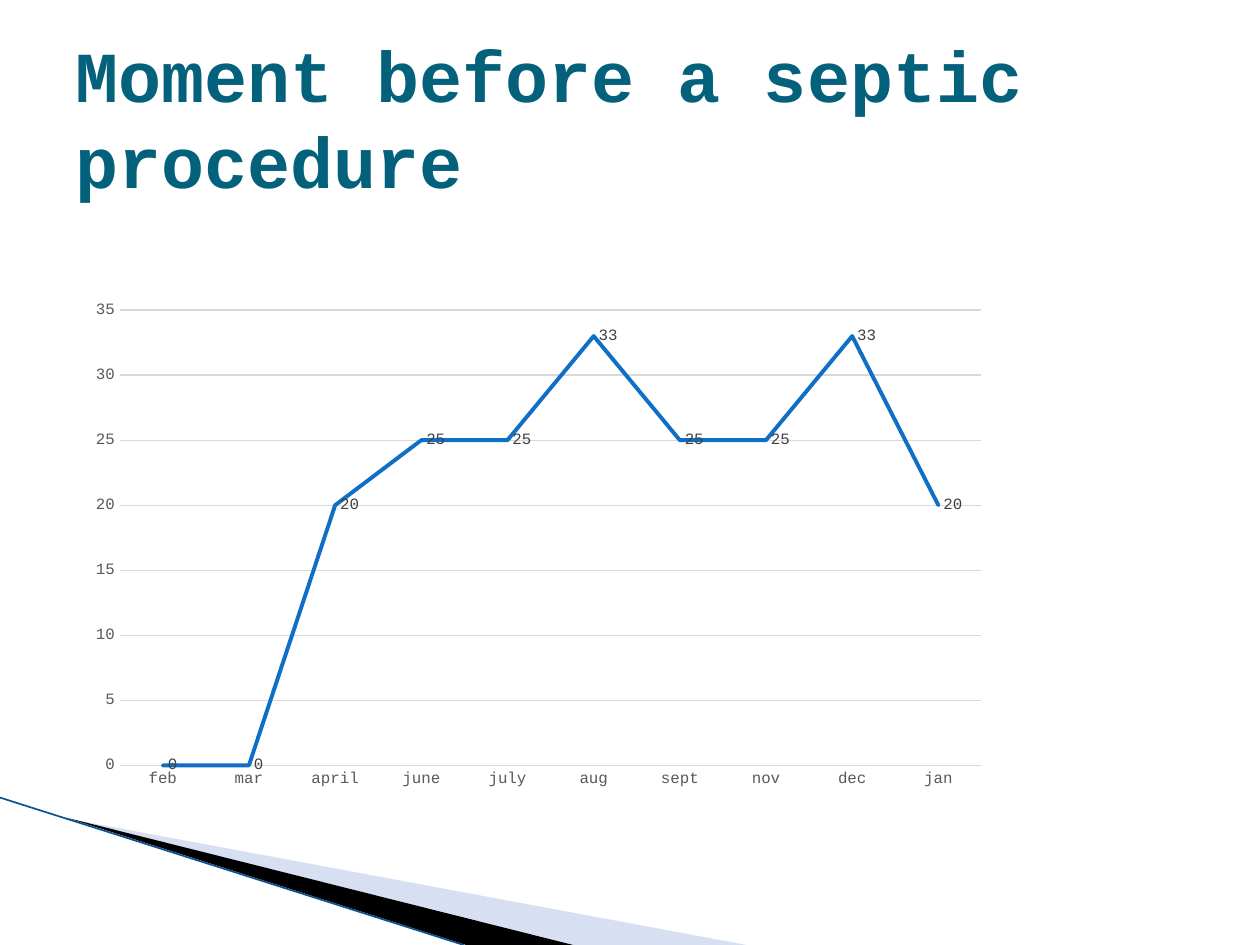
from lxml import etree
from pptx import Presentation
from pptx.chart.data import CategoryChartData
from pptx.dml.color import RGBColor
from pptx.enum.chart import XL_CHART_TYPE, XL_LABEL_POSITION, XL_MARKER_STYLE, XL_TICK_MARK
from pptx.enum.shapes import MSO_CONNECTOR
from pptx.enum.text import MSO_ANCHOR
from pptx.oxml import parse_xml
from pptx.oxml.ns import nsdecls, qn
from pptx.util import Inches, Pt

LINE = XL_CHART_TYPE.LINE
RIGHT = XL_LABEL_POSITION.RIGHT
NO_MARKER = XL_MARKER_STYLE.NONE
NO_TICK = XL_TICK_MARK.NONE
STRAIGHT = MSO_CONNECTOR.STRAIGHT
MIDDLE = MSO_ANCHOR.MIDDLE

TEAL = RGBColor(0x04, 0x61, 0x7B)
BLUE = RGBColor(0x0F, 0x6F, 0xC6)
NAVY = RGBColor(0x0B, 0x52, 0x94)
PALE = RGBColor(0x9D, 0xB2, 0xE1)
BLACK = RGBColor(0x00, 0x00, 0x00)
LABEL = RGBColor(0x40, 0x40, 0x40)
GREY = RGBColor(0x59, 0x59, 0x59)
RULE = RGBColor(0xD9, 0xD9, 0xD9)

# Slide measured on a grid of 20 columns by 15 rows
COLS, ROWS = 20, 15
WIDTH, HEIGHT = Inches(10), Inches(7.5)

MONTHS = ["feb", "mar", "april", "june", "july", "aug", "sept", "nov", "dec", "jan"]
VALUES = [0, 0, 20, 25, 25, 33, 25, 25, 33, 20]
PLOT = {"x": 0.05, "y": 0.17, "w": 0.76, "h": 0.73}


class Deck:
    face = "Courier New"

    def __init__(self, prs):
        self.s = prs.slides.add_slide(prs.slide_layouts[6])

    def grid(self, col, row):
        return round(col * WIDTH / COLS), round(row * HEIGHT / ROWS)

    def font(self, font, size, color, bold=False):
        font.color.rgb = color
        for name, value in {"name": self.face, "size": Pt(size), "bold": bold}.items():
            setattr(font, name, value)

    def wedge(self, points, color, opacity=None):
        start, *rest = [self.grid(*pt) for pt in points]
        builder = self.s.shapes.build_freeform(*start)
        builder.add_line_segments(rest, close=True)
        sp = builder.convert_to_shape()
        sp.shadow.inherit = False
        sp.fill.solid()
        sp.fill.fore_color.rgb = color
        sp.line.fill.background()
        if opacity:
            clr = sp.fill._xPr.find(qn("a:solidFill"))[0]
            etree.SubElement(clr, qn("a:alpha"), val=str(opacity * 1000))

    def line(self, start, end, color, width):
        sp = self.s.shapes.add_connector(STRAIGHT, *self.grid(*start), *self.grid(*end))
        sp.line.color.rgb = color
        sp.line.width = Pt(width)
        etree.SubElement(sp._element.spPr, qn("a:effectLst"))

    def title(self, text, at, size):
        sp = self.s.shapes.add_textbox(*self.grid(*at[:2]), *self.grid(*at[2:]))
        tf = sp.text_frame
        tf.word_wrap = True
        tf.vertical_anchor = MIDDLE
        r = tf.paragraphs[0].add_run()
        r.text = text
        self.font(r.font, size, TEAL, bold=True)

    def line_chart(self, cats, values, at, plot):
        data = CategoryChartData()
        data.categories = cats
        data.add_series("Series 1", values)
        chart = self.s.shapes.add_chart(
            LINE, *self.grid(*at[:2]), *self.grid(*at[2:]), data).chart
        chart.has_legend = chart.has_title = False
        self.font(chart.font, 10, BLACK)

        # Axes
        cat, val = chart.category_axis, chart.value_axis
        for axis in (cat, val):
            axis.major_tick_mark = axis.minor_tick_mark = NO_TICK
            self.font(axis.tick_labels.font, 9, GREY)
        val.minimum_scale, val.maximum_scale, val.major_unit = 0, 35, 5
        val.has_major_gridlines = True
        val.format.line.fill.background()
        for rule in (cat.format.line, val.major_gridlines.format.line):
            rule.color.rgb = RULE
            rule.width = Pt(0.75)

        # Series and its value labels
        series = chart.plots[0].series[0]
        series.smooth = False
        series.marker.style = NO_MARKER
        series.format.line.color.rgb = BLUE
        series.format.line.width = Pt(2.25)
        series.format.line._ln.set("cap", "rnd")
        chart.plots[0].vary_by_categories = False
        labels = series.data_labels
        labels.show_value = True
        labels.position = RIGHT
        self.font(labels.font, 9, LABEL)

        # Inner plot area
        area = chart._chartSpace.chart.plotArea
        for old in area.findall(qn("c:layout")):
            area.remove(old)
        modes = '<c:xMode val="edge"/><c:yMode val="edge"/>'
        sizes = "".join(f'<c:{k} val="{v}"/>' for k, v in plot.items())
        area.insert(0, parse_xml(
            f'<c:layout {nsdecls("c")}><c:manualLayout><c:layoutTarget val="inner"/>'
            f'{modes}{sizes}</c:manualLayout></c:layout>'))


def main():
    prs = Presentation()
    prs.slide_width, prs.slide_height = WIDTH, HEIGHT
    deck = Deck(prs)

    # Corner decoration
    deck.wedge([(1.1, 13), (11.85, 15), (9.12, 15)], PALE, opacity=40)
    deck.wedge([(1.06, 12.98), (9.1, 15), (7.4, 15)], BLACK)
    deck.line((0, 12.66), (7.36, 15), NAVY, 0.95)

    # Title and chart
    deck.title("Moment before a septic procedure", (1, 0.6, 18, 2.5), 41)
    deck.line_chart(MONTHS, VALUES, (1, 3.24, 18, 9.9), PLOT)
    prs.save("out.pptx")


if __name__ == "__main__":
    main()
